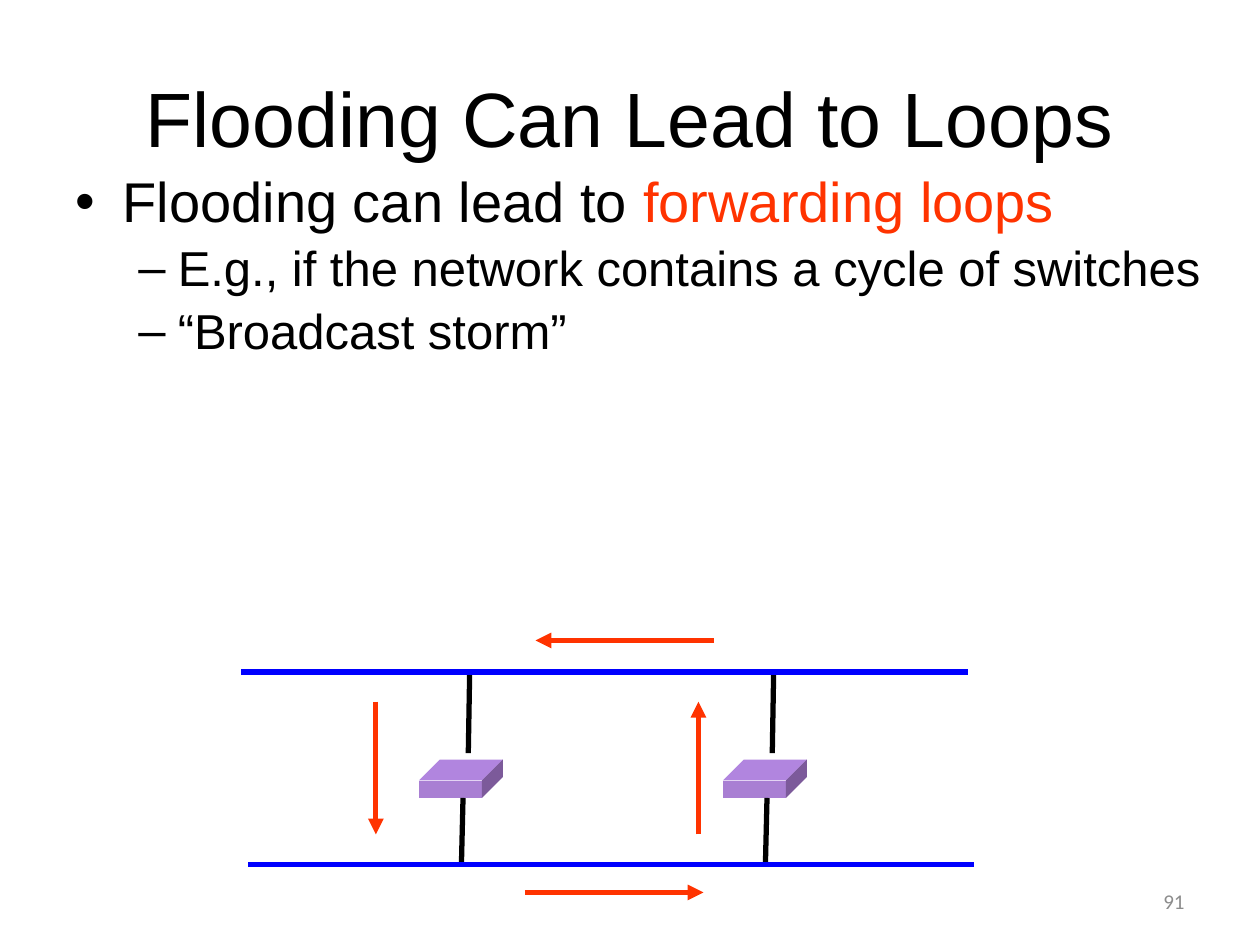
from pptx import Presentation
from pptx.dml.color import RGBColor
from pptx.enum.text import MSO_ANCHOR, PP_ALIGN
from pptx.oxml.ns import qn
from pptx.util import Pt
from lxml import etree

LEFT, CENTER, RIGHT = PP_ALIGN.LEFT, PP_ALIGN.CENTER, PP_ALIGN.RIGHT
TOP, MIDDLE = MSO_ANCHOR.TOP, MSO_ANCHOR.MIDDLE

THEME = {
    "text": "000000", "accent": "FF3300", "segment": "0000FF", "muted": "8C8C8C",
    "front": "A97FD3", "roof": "B185DF", "side": "7C5A9A",
    "font": "Arial", "number_font": "Calibri",
    "title": 44, "body": 32, "detail": 28, "number": 12, "stroke": 3,
}

TITLE = [{"runs": [("Flooding Can Lead to Loops", "text")], "size": "title",
          "format": {"alignment": CENTER}}]
BODY_FORMAT = {"alignment": LEFT, "line_spacing": 0.9}
POINTS = [
    {"runs": [("Flooding can lead to ", "text"), ("forwarding loops", "accent")],
     "size": "body", "bullet": ("•", 27, -27),
     "format": {**BODY_FORMAT, "space_before": Pt(6.4)}},
    *({"runs": [(detail, "text")], "size": "detail", "bullet": ("–", 58.5, -22.5),
       "format": {**BODY_FORMAT, "space_before": Pt(5.6)}}
      for detail in ("E.g., if the network contains a cycle of switches",
                     "“Broadcast storm”")),
]
PAGE_NUMBER = [{"runs": [("91", "muted")], "size": "number", "font": "number_font",
                "format": {"alignment": RIGHT}}]
TEXTS = [
    (TITLE, (36, 21.6, 648, 90), MIDDLE),
    (POINTS, (36, 95.8, 666, 257.8), TOP),
    (PAGE_NUMBER, (516, 500.4, 168, 28.8), MIDDLE),
]

UPPER, LOWER = 384, 493.8
SEGMENTS = [(138, UPPER, 553, UPPER), (141.8, LOWER, 556.6, LOWER)]
SWITCH_LEFTS = [239.4, 413.1]
SWITCH_TOP, SWITCH_WIDTH, SWITCH_HEIGHT, SWITCH_DEPTH = 446, 36, 10, 12
LOOP = [
    (214.8, 401, 214.8, 476.8),
    (399.1, 476.8, 399.1, 401),
    (300, 510, 402, 510),
    (408, 366, 306, 366),
]


def color(key):
    return RGBColor.from_string(THEME[key])


def add_text(slide, paragraphs, box, anchor):
    frame = slide.shapes.add_textbox(*map(Pt, box)).text_frame
    frame.word_wrap = True
    frame.vertical_anchor = anchor
    for index, content in enumerate(paragraphs):
        paragraph = frame.add_paragraph() if index else frame.paragraphs[0]
        for name, value in content["format"].items():
            setattr(paragraph, name, value)
        if "bullet" in content:
            mark, margin, indent = content["bullet"]
            properties = paragraph._p.get_or_add_pPr()
            properties.set("marL", str(Pt(margin)))
            properties.set("indent", str(Pt(indent)))
            etree.SubElement(properties, qn("a:buFont"), typeface=THEME["font"])
            etree.SubElement(properties, qn("a:buChar"), char=mark)
        for words, ink in content["runs"]:
            run = paragraph.add_run()
            run.text = words
            run.font.name = THEME[content.get("font", "font")]
            run.font.size = Pt(THEME[content["size"]])
            run.font.color.rgb = color(ink)


def add_line(slide, ends, ink, arrow=False):
    line = slide.shapes.add_connector(1, *map(Pt, ends))
    line.line.color.rgb = color(ink)
    line.line.width = Pt(THEME["stroke"])
    properties = line._element.spPr
    if arrow:
        etree.SubElement(properties.find(qn("a:ln")), qn("a:tailEnd"), type="triangle")
    etree.SubElement(properties, qn("a:effectLst"))


def add_face(slide, corners, fill):
    start, *rest = [(Pt(x), Pt(y)) for x, y in corners]
    outline = slide.shapes.build_freeform(*start)
    outline.add_line_segments(rest, close=True)
    face = outline.convert_to_shape()
    face.shadow.inherit = False
    face.fill.solid()
    face.fill.fore_color.rgb = color(fill)
    face.line.fill.background()


def add_switch(slide, left):
    right, bottom = left + SWITCH_WIDTH, SWITCH_TOP + SWITCH_HEIGHT
    back = SWITCH_TOP - SWITCH_DEPTH
    back_left, back_right = left + SWITCH_DEPTH, right + SWITCH_DEPTH
    front_edge = [(left, SWITCH_TOP), (right, SWITCH_TOP)]
    add_face(slide, front_edge + [(right, bottom), (left, bottom)], "front")
    add_face(slide, front_edge + [(back_right, back), (back_left, back)], "roof")
    add_face(slide, [(right, SWITCH_TOP), (back_right, back),
                     (back_right, bottom - SWITCH_DEPTH), (right, bottom)], "side")
    add_line(slide, (left + 29, UPPER, left + 28.2, 430.4), "text")
    add_line(slide, (left + 25.2, bottom, left + 24.3, LOWER), "text")


def main():
    deck = Presentation()
    deck.slide_width, deck.slide_height = Pt(720), Pt(540)
    slide = deck.slides.add_slide(deck.slide_layouts[6])
    for text in TEXTS:
        add_text(slide, *text)
    for left in SWITCH_LEFTS:
        add_switch(slide, left)
    for segment in SEGMENTS:
        add_line(slide, segment, "segment")
    for hop in LOOP:
        add_line(slide, hop, "accent", arrow=True)
    deck.save("out.pptx")


if __name__ == "__main__":
    main()
